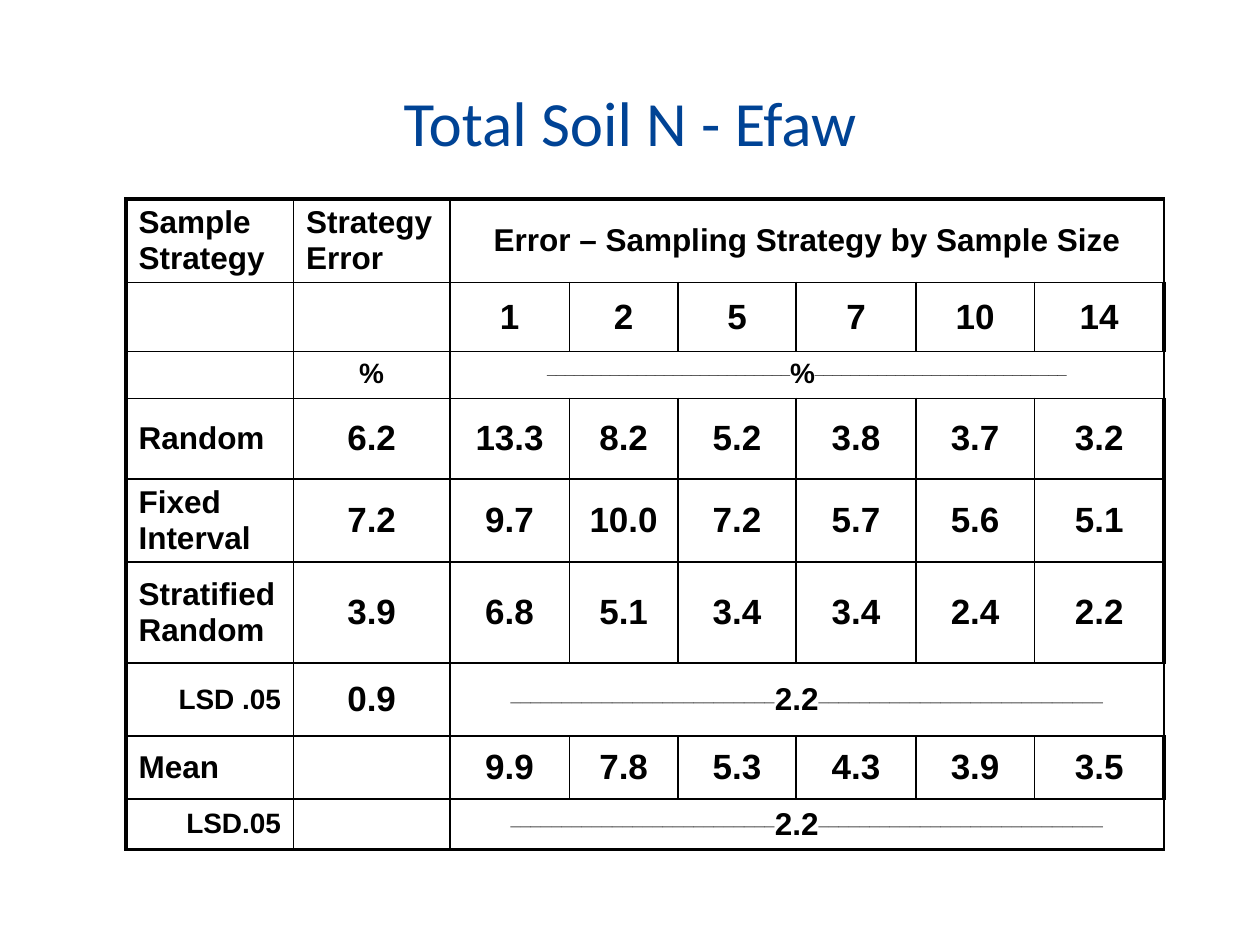
from lxml import etree
from pptx import Presentation
from pptx.dml.color import RGBColor
from pptx.enum import text
from pptx.oxml.ns import qn
from pptx.util import Inches, Pt

LEFT, CENTER, RIGHT = text.PP_ALIGN.LEFT, text.PP_ALIGN.CENTER, text.PP_ALIGN.RIGHT
TOP, MIDDLE = text.MSO_ANCHOR.TOP, text.MSO_ANCHOR.MIDDLE


def write(paragraph, content, size=20, color="000000", font="Arial", bold=True, align=CENTER, raised=False):
    paragraph.alignment = align
    run = paragraph.add_run()
    run.text = content
    run.font.size = Pt(size)
    run.font.name = font
    run.font.bold = bold
    run.font.color.rgb = RGBColor.from_string(color)
    if raised:
        run.font._element.set("baseline", "30000")


def outline(cell, widths):
    properties = cell._tc.get_or_add_tcPr()
    for position, (side, width) in enumerate(widths.items()):
        edge = etree.Element(qn(f"a:ln{side}"), w=str(Pt(width)))
        fill = etree.SubElement(edge, qn("a:solidFill"))
        etree.SubElement(fill, qn("a:srgbClr"), val="000000")
        properties.insert(position, edge)


prs = Presentation()
prs.slide_width, prs.slide_height = Inches(10), Inches(7.5)
slide = prs.slides.add_slide(prs.slide_layouts[5])

title = slide.shapes.title
title.left, title.top, title.width, title.height = [Inches(n) for n in (0.75, 0.42, 8.5, 1.08)]
title.text_frame.vertical_anchor = MIDDLE
write(title.text_frame.paragraphs[0], "Total Soil N - Efaw", size=36, color="004395", font="Calibri", bold=False)

column_widths = [1.33, 1.24, 0.95, 0.86, 0.94, 0.95, 0.94, 1.03]
row_heights = [0.64, 0.55, 0.35, 0.64, 0.64, 0.8, 0.58, 0.5, 0.4]
rows = [
    ["Sample Strategy", "Strategy Error", "Error – Sampling Strategy by Sample Size"],
    ["", "", "1", "2", "5", "7", "10", "14"],
    ["", "%", ("_" * 27, "%", "_" * 28)],
    ["Random", "6.2", "13.3", "8.2", "5.2", "3.8", "3.7", "3.2"],
    ["Fixed Interval", "7.2", "9.7", "10.0", "7.2", "5.7", "5.6", "5.1"],
    ["Stratified Random", "3.9", "6.8", "5.1", "3.4", "3.4", "2.4", "2.2"],
    ["LSD .05", "0.9", ("_" * 26, "2.2", "_" * 28)],
    ["Mean", "", "9.9", "7.8", "5.3", "4.3", "3.9", "3.5"],
    ["LSD.05", "", ("_" * 26, "2.2", "_" * 28)],
]
last_row, last_column = len(rows) - 1, len(column_widths) - 1

errors = slide.shapes.add_table(len(rows), len(column_widths), Inches(1), Inches(1.58),
                                Inches(sum(column_widths)), Inches(sum(row_heights))).table
errors.first_row = errors.horz_banding = False
for column, width in zip(errors.columns, column_widths):
    column.width = Inches(width)

for r, (values, height) in enumerate(zip(rows, row_heights)):
    errors.rows[r].height = Inches(height)
    for c in range(last_column + 1):
        cell = errors.cell(r, c)
        cell.fill.background()
        outline(cell, {
            "L": 2.25 if c == 0 else 1,
            "R": 2.25 if c == last_column else 1,
            "T": 2.25 if r == 0 else 1,
            "B": 2.25 if r == last_row else 1,
        })
    if len(values) == 3:
        errors.cell(r, 2).merge(errors.cell(r, last_column))
    for c, value in enumerate(values):
        cell = errors.cell(r, c)
        cell.vertical_anchor = TOP if r == 2 or (r == 0 and c < 2) else MIDDLE
        paragraph = cell.text_frame.paragraphs[0]
        is_lsd = c == 0 and value.startswith("LSD")
        if r == 2 or is_lsd:
            size = 16
        elif r == 0 or c == 0 or isinstance(value, tuple):
            size = 18
        else:
            size = 20
        align = RIGHT if is_lsd else LEFT if c == 0 or (r == 0 and c == 1) else CENTER
        if not value:
            etree.SubElement(paragraph._p, qn("a:endParaRPr"), sz="1600")
        elif isinstance(value, tuple):
            for part in value:
                write(paragraph, part, size=size, raised=part.startswith("_"))
        else:
            write(paragraph, value, size=size, align=align)

prs.save("out.pptx")
